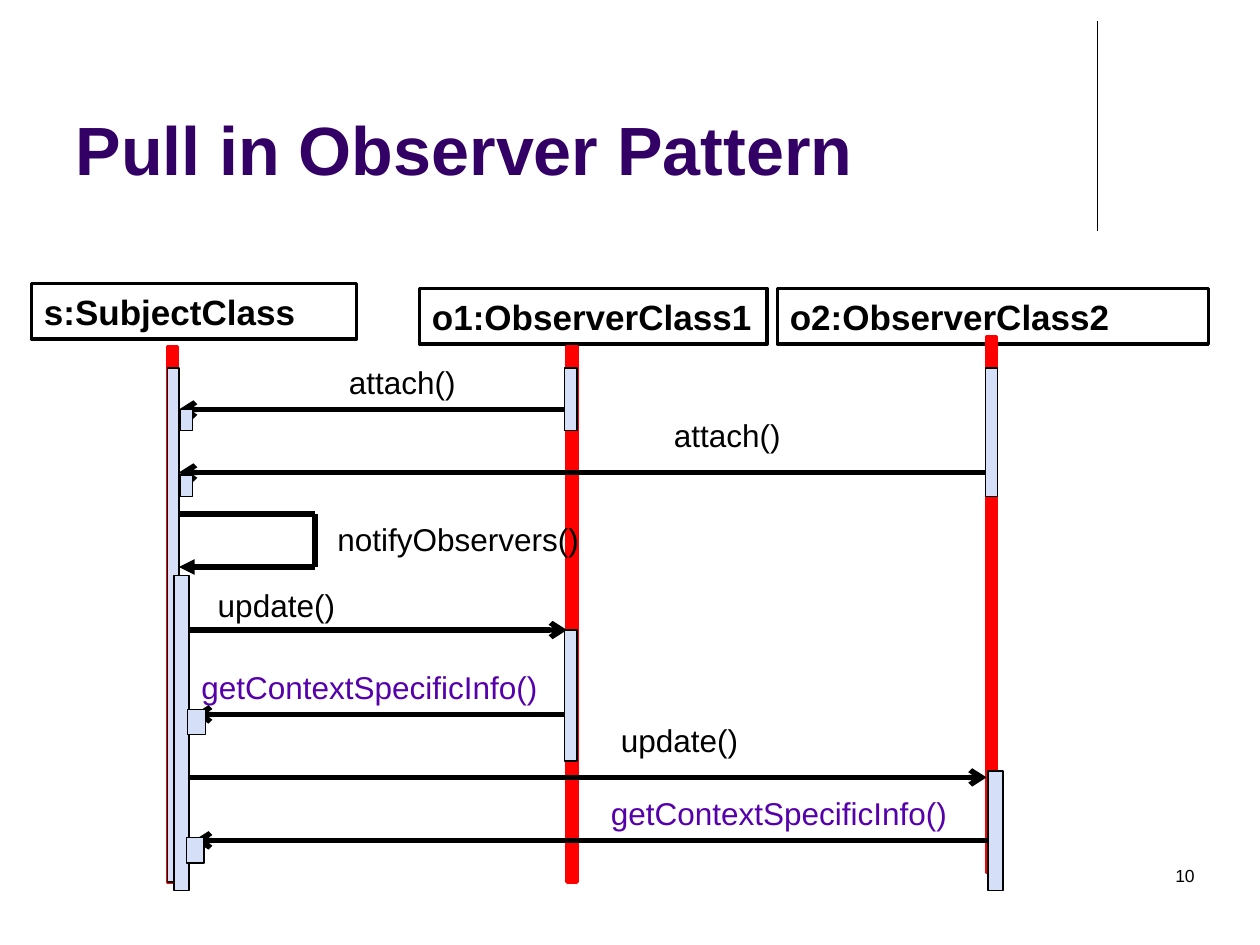
from pptx import Presentation
from pptx.dml.color import RGBColor
from pptx.enum.shapes import MSO_CONNECTOR as Conn, MSO_SHAPE as Shape
from pptx.enum.text import MSO_ANCHOR as Anchor, MSO_AUTO_SIZE as AutoSize, PP_ALIGN as Align
from pptx.oxml.ns import qn
from pptx.util import Inches, Pt
from lxml import etree

THEME = {
    "font": "Arial",
    "ink": RGBColor(0, 0, 0),
    "title": RGBColor(0x33, 0x00, 0x66),
    "pull": RGBColor(0x56, 0x00, 0xAC),
    "lifeline": RGBColor(0xFF, 0, 0),
    "activation": RGBColor(0xD5, 0xDF, 0xF7),
    "title_size": Pt(39),
    "object_size": Pt(20),
    "message_size": Pt(18),
    "number_size": Pt(10),
}

prs = Presentation()
prs.slide_width, prs.slide_height = Inches(10), Inches(7.5)
slide = prs.slides.add_slide(prs.slide_layouts[5])
shapes = slide.shapes


def write(shape, text, size, color, bold=False, align=Align.LEFT, **frame_format):
    frame = shape.text_frame
    frame.text = text
    for name, value in frame_format.items():
        setattr(frame, name, value)
    paragraph = frame.paragraphs[0]
    paragraph.alignment = align
    font = paragraph.runs[0].font
    font.color.rgb = color
    for name, value in {"name": THEME["font"], "size": size, "bold": bold}.items():
        setattr(font, name, value)


def draw_line(x1, y1, x2, y2, width=3, head=None):
    line = shapes.add_connector(Conn.STRAIGHT, *map(Inches, (x1, y1, x2, y2)))
    line.line.color.rgb = THEME["ink"]
    line.line.width = Pt(width)
    if head:
        etree.SubElement(line.line._get_or_add_ln(), qn("a:tailEnd"), type=head)
    etree.SubElement(line._element.spPr, qn("a:effectLst"))


# Corner rule, slide number and title
draw_line(8.71, 0.17, 8.71, 1.83, width=0.75)

number = shapes.add_textbox(*map(Inches, (7.25, 6.82, 2.33, 0.5)))
write(number, "10", THEME["number_size"], THEME["ink"], align=Align.RIGHT, word_wrap=True)

title = shapes.title
title.left, title.top, title.width, title.height = map(Inches, (0.5, 0.13, 8.25, 1.42))
write(title, "Pull in Observer Pattern", THEME["title_size"], THEME["title"], bold=True,
      vertical_anchor=Anchor.BOTTOM, auto_size=AutoSize.NONE)

# Object boxes
for name, left, top, width, wrap in [
    ("s:SubjectClass", 0.25, 2.25, 2.58, True),
    ("o1:ObserverClass1", 3.33, 2.29, 2.76, False),
    ("o2:ObserverClass2", 6.17, 2.29, 3.42, True),
]:
    participant = shapes.add_shape(Shape.RECTANGLE, *map(Inches, (left, top, width, 0.44)))
    participant.shadow.inherit = False
    participant.fill.background()
    participant.line.color.rgb = THEME["ink"]
    participant.line.width = Pt(2)
    write(participant, name, THEME["object_size"], THEME["ink"], bold=True,
          vertical_anchor=Anchor.MIDDLE, word_wrap=wrap, auto_size=AutoSize.SHAPE_TO_FIT_TEXT)

# Lifelines
for left, top in [(1.33, 2.75), (4.5, 2.75), (7.83, 2.67)]:
    lifeline = shapes.add_shape(Shape.RECTANGLE, *map(Inches, (left, top, 0.08, 4.25)))
    lifeline.shadow.inherit = False
    lifeline.fill.solid()
    lifeline.fill.fore_color.rgb = lifeline.line.color.rgb = THEME["lifeline"]
    lifeline.line.width = Pt(2)

# Message labels
for call, left, top, width, color in [
    ("attach()", 2.67, 2.83, 1.06, "ink"),
    ("attach()", 5.25, 3.25, 1.06, "ink"),
    ("notifyObservers()", 2.58, 4.08, 2.14, "ink"),
    ("update()", 1.63, 4.6, 1.14, "ink"),
    ("getContextSpecificInfo()", 1.5, 5.25, 2.89, "pull"),
    ("update()", 4.83, 5.67, 1.14, "ink"),
    ("getContextSpecificInfo()", 4.75, 6.25, 2.89, "pull"),
]:
    label = shapes.add_textbox(*map(Inches, (left, top, width, 0.4)))
    write(label, call, THEME["message_size"], THEME[color],
          word_wrap=False, auto_size=AutoSize.SHAPE_TO_FIT_TEXT)

# Self call of the subject
draw_line(1.42, 4.08, 2.5, 4.08)
draw_line(2.5, 4.08, 2.5, 4.5)
draw_line(2.5, 4.5, 1.42, 4.5, head="triangle")

# Messages between subject and observers
SUBJECT, NESTED, OBSERVER_1, OBSERVER_2 = 1.42, 1.54, 4.5, 7.83
for sender, receiver, y in [
    (OBSERVER_1, SUBJECT, 3.25),
    (OBSERVER_2, SUBJECT, 3.75),
    (SUBJECT, OBSERVER_1, 5),
    (OBSERVER_1, NESTED, 5.67),
    (SUBJECT, OBSERVER_2, 6.17),
    (OBSERVER_2, NESTED, 6.67),
]:
    draw_line(sender, y, receiver, y, head="arrow")

# Activation bars
for bounds in [
    (1.33, 2.92, 0.09, 4.08),
    (4.48, 2.92, 0.1, 0.5),
    (1.43, 3.25, 0.1, 0.17),
    (1.38, 4.57, 0.12, 2.5),
    (4.48, 5, 0.1, 1.04),
    (7.84, 6.12, 0.12, 0.95),
    (1.49, 5.63, 0.14, 0.2),
    (1.48, 6.65, 0.14, 0.2),
    (1.43, 3.77, 0.1, 0.17),
    (7.82, 2.92, 0.1, 1.02),
]:
    activation = shapes.add_shape(Shape.RECTANGLE, *map(Inches, bounds))
    activation.shadow.inherit = False
    activation.fill.solid()
    activation.fill.fore_color.rgb = THEME["activation"]
    activation.line.color.rgb = THEME["ink"]
    activation.line.width = Pt(0.75)

prs.save("out.pptx")
